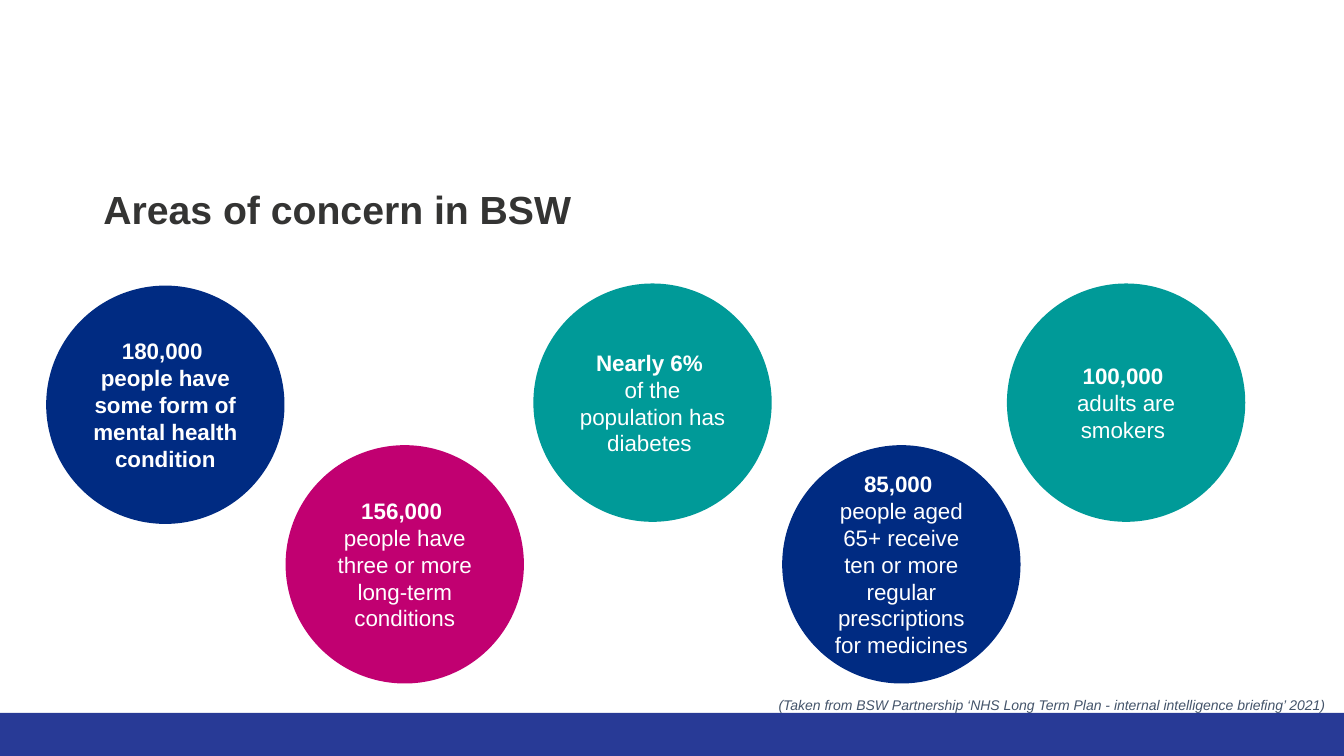
from pptx import Presentation
from pptx.dml.color import RGBColor
from pptx.enum.shapes import MSO_SHAPE
from pptx.enum.text import MSO_ANCHOR, PP_ALIGN
from pptx.util import Emu, Pt

NAVY = RGBColor(0x00, 0x2B, 0x82)
PINK = RGBColor(0xC1, 0x00, 0x71)
TEAL = RGBColor(0x00, 0x9A, 0x98)
BLUE = RGBColor(0x28, 0x3A, 0x96)
DARK = RGBColor(0x34, 0x34, 0x33)
SLATE = RGBColor(0x44, 0x54, 0x6A)
WHITE = RGBColor(0xFF, 0xFF, 0xFF)

DISC = 227
HIGH, LOW = 270, 424

# left, top, fill, figure, wording, wording is bold
FACTS = [
    (44, HIGH + 2, NAVY, "180,000 ", "people have some form of mental health condition", True),
    (272, LOW, PINK, "156,000 ", "people have three or more long-term conditions", False),
    (508, HIGH, TEAL, "Nearly 6% ", "of the population has diabetes ", False),
    (745, LOW, NAVY, "85,000 ", "people aged 65+ receive ten or more regular "
     "prescriptions for medicines", False),
    (959, HIGH, TEAL, "100,000 ", "adults are smokers ", False),
]


def px(count):
    """Turn px, at 96 to the inch, into EMU."""
    return Emu(count * 9525)


def write(para, text, size=16, color=WHITE, bold=False, italic=False):
    """Add one formatted run to a paragraph."""
    run = para.add_run()
    run.text = text
    font = run.font
    font.name = "Arial"
    font.size = Pt(size)
    font.color.rgb = color
    font.bold = bold
    font.italic = italic


def add_solid(slide, kind, left, top, width, height, fill):
    shape = slide.shapes.add_shape(kind, px(left), px(top), px(width), px(height))
    shape.shadow.inherit = False
    shape.fill.solid()
    shape.fill.fore_color.rgb = fill
    shape.line.fill.background()
    return shape


def add_fact(slide, left, top, fill, figure, wording, bold):
    """Draw a disc with a bold figure above its wording."""
    disc = add_solid(slide, MSO_SHAPE.OVAL, left, top, DISC, DISC, fill)
    frame = disc.text_frame
    frame.word_wrap = True
    frame.vertical_anchor = MSO_ANCHOR.MIDDLE
    para = frame.paragraphs[0]
    para.alignment = PP_ALIGN.CENTER
    write(para, figure, bold=True)
    para.add_line_break()
    write(para, wording, bold=bold)


def add_label(slide, left, top, width, height, text, **style):
    box = slide.shapes.add_textbox(px(left), px(top), px(width), px(height))
    box.text_frame.word_wrap = True
    write(box.text_frame.paragraphs[0], text, **style)


def main():
    deck = Presentation()
    deck.slide_width, deck.slide_height = px(1280), px(720)
    slide = deck.slides.add_slide(deck.slide_layouts[6])
    add_solid(slide, MSO_SHAPE.RECTANGLE, -10, 679, 1300, 54, BLUE)
    for fact in FACTS:
        add_fact(slide, *fact)
    add_label(slide, 89, 172, 643, 100, "Areas of concern in BSW",
              size=28, color=DARK, bold=True)
    add_label(slide, 732, 659, 643, 26,
              "(Taken from BSW Partnership ‘NHS Long Term Plan - "
              "internal intelligence briefing’ 2021)",
              size=10, color=SLATE, italic=True)
    deck.save("out.pptx")


if __name__ == "__main__":
    main()
